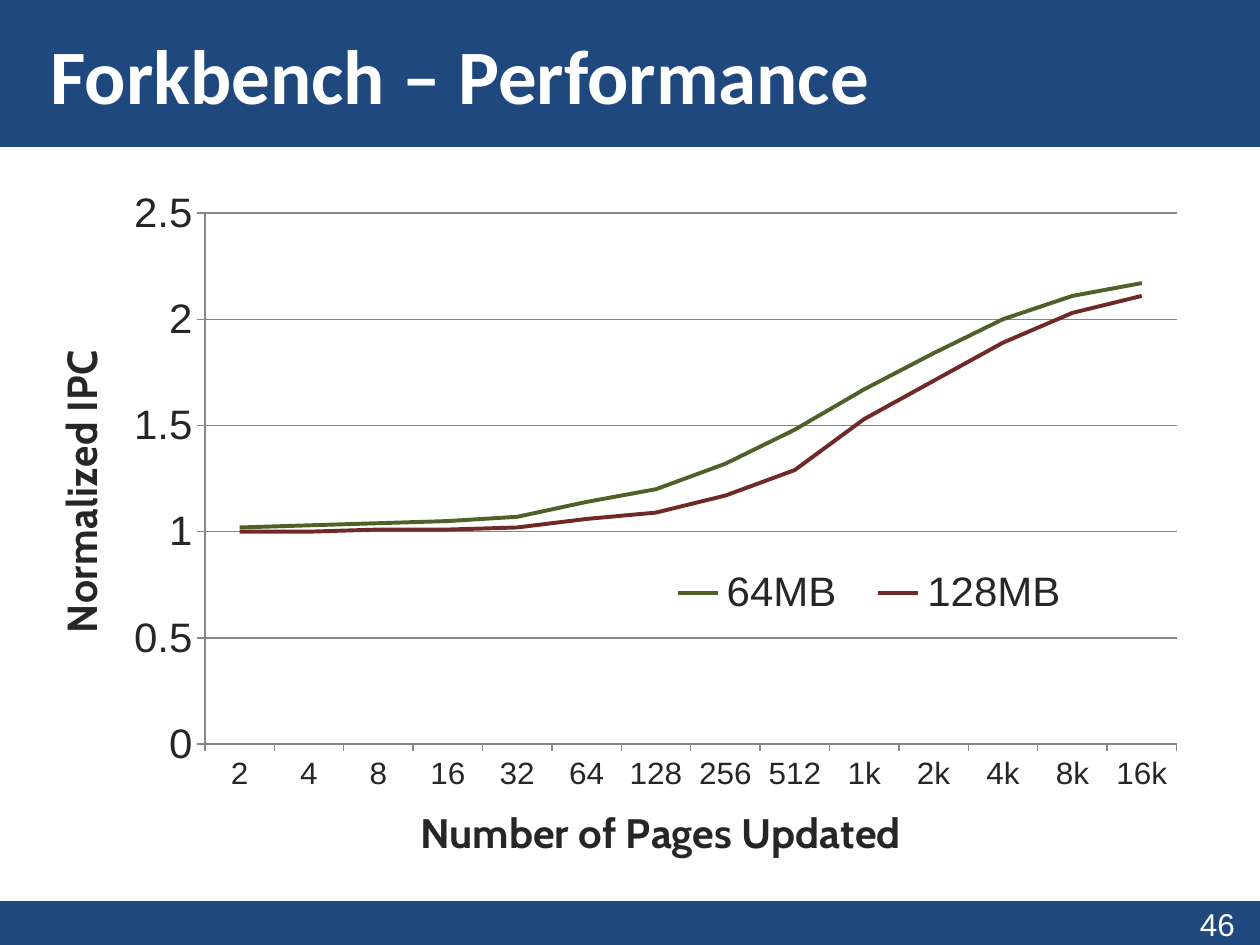
from dataclasses import dataclass

from lxml.etree import SubElement
from pptx import Presentation
from pptx.chart.data import CategoryChartData
from pptx.dml.color import RGBColor
from pptx.enum.chart import XL_CHART_TYPE, XL_LEGEND_POSITION, XL_TICK_MARK
from pptx.enum.shapes import MSO_SHAPE
from pptx.enum.text import MSO_ANCHOR, PP_ALIGN
from pptx.oxml.ns import qn
from pptx.util import Pt


@dataclass(frozen=True)
class Theme:
    bar: RGBColor = RGBColor(0x1F, 0x48, 0x7F)
    light: RGBColor = RGBColor(0xFF, 0xFF, 0xFF)
    ink: RGBColor = RGBColor(0x26, 0x26, 0x26)
    grid: RGBColor = RGBColor(0x86, 0x86, 0x86)
    green: RGBColor = RGBColor(0x4F, 0x61, 0x28)
    red: RGBColor = RGBColor(0x6F, 0x29, 0x26)
    head: int = 44
    label: int = 24
    small: int = 18


def set_font(font, name, size, color, bold=False):
    font.name, font.size, font.bold = name, Pt(size), bold
    font.color.rgb = color


def place(part, index, **values):
    """Give a chart part a manual layout, in fractions of the chart."""
    for old in part.findall(qn("c:layout")):
        part.remove(old)
    layout = SubElement(part, qn("c:layout"))
    part.insert(index, layout)
    manual = SubElement(layout, qn("c:manualLayout"))
    for key, value in values.items():
        SubElement(manual, qn(f"c:{key}")).set("val", str(value))


class Deck:
    def __init__(self, theme):
        self.theme = theme
        self.prs = Presentation()
        self.prs.slide_width, self.prs.slide_height = Pt(720), Pt(540)
        self.slide = self.prs.slides.add_slide(self.prs.slide_layouts[5])

    def bar(self, x, y, w, h):
        box = self.slide.shapes.add_shape(
            MSO_SHAPE.RECTANGLE, Pt(x), Pt(y), Pt(w), Pt(h))
        box.shadow.inherit = False
        box.fill.solid()
        box.fill.fore_color.rgb = box.line.color.rgb = self.theme.bar
        box.line.width = Pt(2)

    def title(self, text, x, y, w, h):
        head = self.slide.shapes.title
        head.left, head.top, head.width, head.height = map(Pt, (x, y, w, h))
        head.fill.solid()
        head.fill.fore_color.rgb = self.theme.bar
        self.fill_text(head.text_frame, text, "Calibri", self.theme.head,
                       PP_ALIGN.LEFT, left=28.8, bold=True)

    def text(self, text, x, y, w, h):
        box = self.slide.shapes.add_textbox(Pt(x), Pt(y), Pt(w), Pt(h))
        self.fill_text(box.text_frame, text, "Arial", self.theme.small,
                       PP_ALIGN.RIGHT, right=14.4)

    def fill_text(self, frame, text, font, size, align, left=7.2, right=7.2,
                  bold=False):
        frame.text = text
        frame.word_wrap = True
        frame.vertical_anchor = MSO_ANCHOR.MIDDLE if bold else MSO_ANCHOR.TOP
        frame.margin_left, frame.margin_right = Pt(left), Pt(right)
        para = frame.paragraphs[0]
        para.alignment = align
        set_font(para.runs[0].font, font, size, self.theme.light, bold)

    def chart(self, cats, lines, x, y, w, h):
        data = CategoryChartData()
        data.categories = cats
        for name, _, values in lines:
            data.add_series(name, values)
        chart = self.slide.shapes.add_chart(
            XL_CHART_TYPE.LINE, Pt(x), Pt(y), Pt(w), Pt(h), data).chart
        chart.has_title = False
        set_font(chart.font, "Cabin", 10, self.theme.ink)
        plot = chart.plots[0]
        plot.vary_by_categories = False
        for series, (_, color, _) in zip(plot.series, lines):
            series.smooth = False
            series.format.line.color.rgb = color
            series.format.line.width = Pt(2.25)
        area = chart._chartSpace.chart.plotArea
        place(area, 0, layoutTarget="inner", xMode="edge", yMode="edge",
              x=0.155, y=0.051, w=0.819, h=0.782)
        # Legend
        chart.has_legend = True
        legend = chart.legend
        legend.position = XL_LEGEND_POSITION.RIGHT
        legend.include_in_layout = False
        set_font(legend.font, "Arial", self.theme.label, self.theme.ink)
        place(legend._element, 1, xMode="edge", yMode="edge",
              x=0.53, y=0.56, w=0.37, h=0.1)
        return chart

    def axis(self, axis, title, size, x, y):
        axis.major_tick_mark = XL_TICK_MARK.OUTSIDE
        axis.minor_tick_mark = XL_TICK_MARK.NONE
        axis.format.line.color.rgb = self.theme.grid
        set_font(axis.tick_labels.font, "Arial", size, self.theme.ink)
        frame = axis.axis_title.text_frame
        frame.text = title
        set_font(frame.paragraphs[0].runs[0].font, "Cabin",
                 self.theme.label, self.theme.ink, True)
        place(axis.axis_title._element, 1, xMode="edge", yMode="edge", x=x, y=y)


def main():
    theme = Theme()
    deck = Deck(theme)

    # Footer and title bars
    deck.bar(0, 516, 720, 24)
    deck.text("46", 552, 513.5, 168, 24)
    deck.title("Forkbench – Performance", 0, 0, 720, 84)

    # Line chart
    cats = ["2", "4", "8", "16", "32", "64", "128", "256", "512",
            "1k", "2k", "4k", "8k", "16k"]
    lines = [
        ("64MB", theme.green, (1.02, 1.03, 1.04, 1.05, 1.07, 1.14, 1.2,
                               1.32, 1.48, 1.67, 1.84, 2, 2.11, 2.17)),
        ("128MB", theme.red, (1, 1, 1.01, 1.01, 1.02, 1.06, 1.09,
                              1.17, 1.29, 1.53, 1.71, 1.89, 2.03, 2.11)),
    ]
    chart = deck.chart(cats, lines, 12, 102, 678, 396)

    # Axes
    deck.axis(chart.category_axis, "Number of Pages Updated", theme.small,
              0.33, 0.91)
    value = chart.value_axis
    deck.axis(value, "Normalized IPC", theme.label, 0.02, 0.25)
    value.minimum_scale, value.maximum_scale, value.major_unit = 0, 2.5, 0.5
    value.has_major_gridlines = True
    value.major_gridlines.format.line.color.rgb = theme.grid
    value.tick_labels.number_format = "General"
    value.tick_labels.number_format_is_linked = False

    deck.prs.save("out.pptx")


if __name__ == "__main__":
    main()
